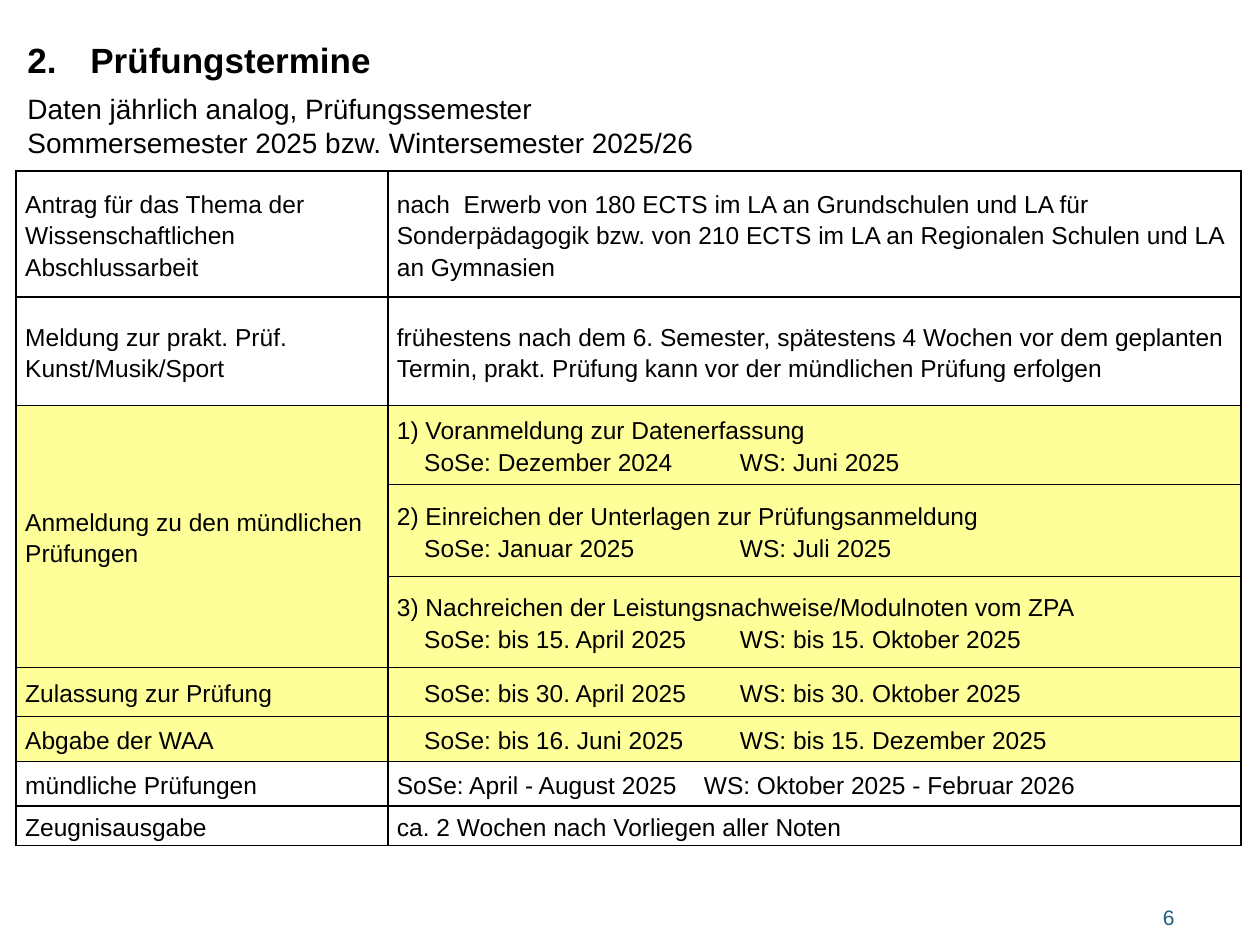
from lxml import etree
from pptx import Presentation
from pptx.dml.color import RGBColor
from pptx.enum.text import MSO_ANCHOR, PP_ALIGN
from pptx.oxml.ns import qn
from pptx.util import Pt

MIDDLE = MSO_ANCHOR.MIDDLE
LEFT, RIGHT = PP_ALIGN.LEFT, PP_ALIGN.RIGHT
BLACK = RGBColor(0x00, 0x00, 0x00)
BLUE = RGBColor(0x1E, 0x5E, 0x7E)
YELLOW = RGBColor(0xFF, 0xFF, 0x99)

TITLE = {"name": "Arial", "size": Pt(20), "bold": True}
SUBTITLE = {"name": "Arial", "size": Pt(16)}
BODY = {"name": "Arial", "size": Pt(14)}
NUMBER = {"name": "Arial", "size": Pt(12)}

COLUMN_WIDTHS = (212.4, 487.6)
ROW_HEIGHTS = (72, 62, 45.2, 52.5, 52, 28, 25.7, 25.4, 22.6)
DATE_TABS = (15.6, 196)
PERIOD_TABS = (175.4,)
REGISTRATION_ROWS = (2, 4)
HIGHLIGHTED_ROWS = range(2, 7)

LABELS = (
    "Antrag für das Thema der Wissenschaftlichen Abschlussarbeit",
    "Meldung zur prakt. Prüf. Kunst/Musik/Sport",
    "Anmeldung zu den mündlichen Prüfungen",
    "",
    "",
    "Zulassung zur Prüfung",
    "Abgabe der WAA",
    "mündliche Prüfungen",
    "Zeugnisausgabe",
)
DETAILS = (
    ["nach  Erwerb von 180 ECTS im LA an Grundschulen und LA für "
     "Sonderpädagogik bzw. von 210 ECTS im LA an Regionalen Schulen und LA "
     "an Gymnasien"],
    ["frühestens nach dem 6. Semester, spätestens 4 Wochen vor dem geplanten "
     "Termin, prakt. Prüfung kann vor der mündlichen Prüfung erfolgen"],
    ["1) Voranmeldung zur Datenerfassung",
     "\tSoSe: Dezember 2024\tWS: Juni 2025"],
    ["2) Einreichen der Unterlagen zur Prüfungsanmeldung",
     "\tSoSe: Januar 2025\tWS: Juli 2025"],
    ["3) Nachreichen der Leistungsnachweise/Modulnoten vom ZPA",
     "\tSoSe: bis 15. April 2025\tWS: bis 15. Oktober 2025"],
    ["\tSoSe: bis 30. April 2025\tWS: bis 30. Oktober 2025"],
    ["\tSoSe: bis 16. Juni 2025\tWS: bis 15. Dezember 2025"],
    ["SoSe: April - August 2025\tWS: Oktober 2025 - Februar 2026"],
    ["ca. 2 Wochen nach Vorliegen aller Noten"],
)


def write_lines(frame, lines, style, color=BLACK, align=LEFT, spacing=None):
    """Write one paragraph per line and return the paragraphs."""
    for index, line in enumerate(lines):
        para = frame.add_paragraph() if index else frame.paragraphs[0]
        para.alignment = align
        para.line_spacing = spacing
        span = para.add_run()
        span.text = line
        for name, value in style.items():
            setattr(span.font, name, value)
        span.font.color.rgb = color
    return frame.paragraphs


def add_text(page, left, top, width, height, lines, style, **options):
    """Add a wrapped text box and return its text frame."""
    box = page.shapes.add_textbox(Pt(left), Pt(top), Pt(width), Pt(height))
    box.text_frame.word_wrap = True
    write_lines(box.text_frame, lines, style, **options)
    return box.text_frame


def number_paragraph(para, start, indent):
    """Number a paragraph automatically with a hanging indent."""
    properties = para._p.get_or_add_pPr()
    properties.set("marL", str(Pt(indent)))
    properties.set("indent", str(-Pt(indent)))
    etree.SubElement(properties, qn("a:buFont"), typeface="+mj-lt")
    etree.SubElement(properties, qn("a:buAutoNum"),
                     type="arabicPeriod", startAt=str(start))


def set_tabs(para, positions):
    """Give a paragraph left tab stops."""
    tabs = etree.SubElement(para._p.get_or_add_pPr(), qn("a:tabLst"))
    for position in positions:
        etree.SubElement(tabs, qn("a:tab"), pos=str(Pt(position)), algn="l")


def set_borders(cell):
    """Draw a thin black line on every side of a cell."""
    properties = cell._tc.get_or_add_tcPr()
    for index, side in enumerate(("lnL", "lnR", "lnT", "lnB")):
        line = etree.Element(qn(f"a:{side}"), w=str(Pt(1)))
        fill = etree.SubElement(line, qn("a:solidFill"))
        etree.SubElement(fill, qn("a:srgbClr"), val=str(BLACK))
        properties.insert(index, line)


def format_cell(cell, highlighted):
    """Set margins, anchor, fill and borders of a cell."""
    layout = {"margin_left": Pt(5.2), "margin_right": Pt(5.2),
              "margin_top": 0, "margin_bottom": 0, "vertical_anchor": MIDDLE}
    for name, value in layout.items():
        setattr(cell, name, value)
    if highlighted:
        cell.fill.solid()
        cell.fill.fore_color.rgb = YELLOW
    else:
        cell.fill.background()
    set_borders(cell)


def add_dates_table(page):
    """Add the table of examination dates."""
    table = page.shapes.add_table(
        len(ROW_HEIGHTS), len(COLUMN_WIDTHS), Pt(9.2), Pt(97.8),
        Pt(sum(COLUMN_WIDTHS)), Pt(sum(ROW_HEIGHTS))).table
    table.first_row = table.horz_banding = False
    for column, width in zip(table.columns, COLUMN_WIDTHS):
        column.width = Pt(width)
    first, last = REGISTRATION_ROWS
    table.cell(first, 0).merge(table.cell(last, 0))
    for index, (label, details) in enumerate(zip(LABELS, DETAILS)):
        table.rows[index].height = Pt(ROW_HEIGHTS[index])
        for column, lines in enumerate(([label], details)):
            cell = table.cell(index, column)
            format_cell(cell, index in HIGHLIGHTED_ROWS)
            if cell.is_spanned:
                continue
            for para in write_lines(cell.text_frame, lines, BODY, spacing=1.15):
                if "\t" in para.text:
                    set_tabs(para, DATE_TABS if para.text[0] == "\t" else PERIOD_TABS)


def main():
    """Build the slide and save the deck."""
    deck = Presentation()
    deck.slide_width, deck.slide_height = Pt(720), Pt(540)
    page = deck.slides.add_slide(deck.slide_layouts[6])
    add_dates_table(page)
    number = add_text(page, 611.3, 504, 67, 24, ["6"], NUMBER,
                      color=BLUE, align=RIGHT)
    number.margin_top = Pt(13)
    title = add_text(page, 8.6, 15, 453.6, 34, ["Prüfungstermine"], TITLE,
                     spacing=1.15)
    title.paragraphs[0].space_after = Pt(10)
    number_paragraph(title.paragraphs[0], 2, 36)
    add_text(page, 8.6, 49, 493.2, 46,
             ["Daten jährlich analog, Prüfungssemester",
              "Sommersemester 2025 bzw. Wintersemester 2025/26"], SUBTITLE)
    deck.save("out.pptx")


if __name__ == "__main__":
    main()
